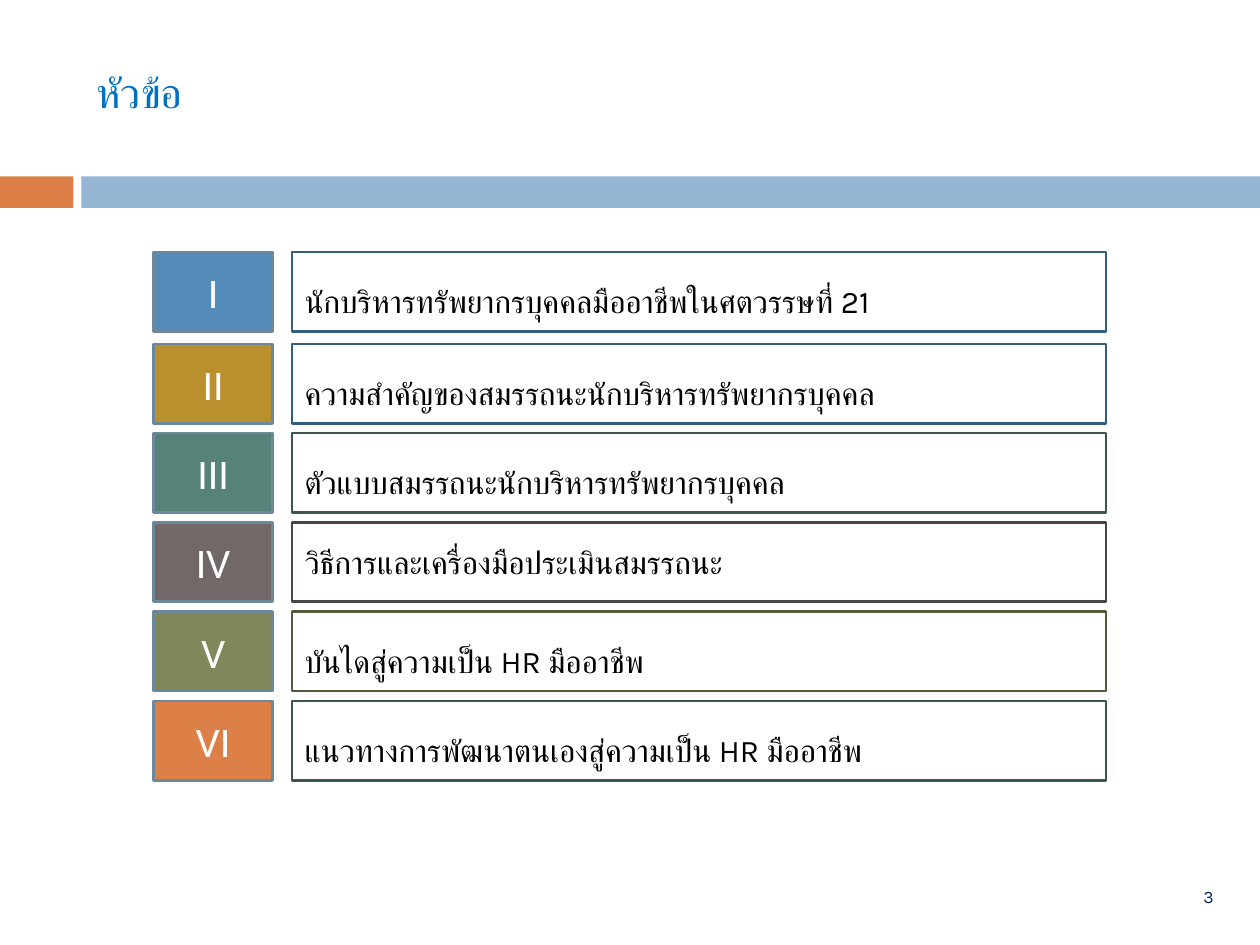
from dataclasses import dataclass

from lxml import etree
from pptx import Presentation
from pptx.dml.color import RGBColor
from pptx.enum import shapes, text
from pptx.oxml import ns
from pptx.util import Pt


@dataclass(frozen=True)
class Theme:
    title_font: str = "TeX Gyre Adventor"
    body_font: str = "Karla"
    numeral_font: str = "Calibri"
    title_size: int = 24
    numeral_size: int = 24
    topic_size: int = 18
    page_size: int = 10
    title: str = "0070C0"
    page: str = "002060"
    accent: str = "DD8047"
    band: str = "94B6D2"
    numeral_line: str = "6D879B"
    white: str = "FFFFFF"
    black: str = "000000"


THEME = Theme()
FIRST_TOP, SECOND_TOP, ROW_PITCH = 144, 196.5, 51
ROW_HEIGHT = 45.4

# numeral, topic, numeral fill, topic outline, line spacing
TOPICS = [
    ("I", "นักบริหารทรัพยากรบุคคลมืออาชีพในศตวรรษที่ 21", "558BB8", "355D7E", 1.5),
    ("II", "ความสำคัญของสมรรถนะนักบริหารทรัพยากรบุคคล", "BA8F2D", "355D7E", 1.5),
    ("III", "ตัวแบบสมรรถนะนักบริหารทรัพยากรบุคคล", "578279", "3A5750", 1.5),
    ("IV", "วิธีการและเครื่องมือประเมินสมรรถนะ", "726868", "4C4545", 1),
    ("V", "บันไดสู่ความเป็น HR มืออาชีพ", "81875A", "565A3C", 1.5),
    ("VI", "แนวทางการพัฒนาตนเองสู่ความเป็น HR มืออาชีพ", THEME.accent, "3A5750", 1.5),
]


def write(shape, words, font, size, color, align=text.PP_ALIGN.LEFT, spacing=1):
    """Put one middle-anchored run in the shape, in one font for Latin and Thai."""
    frame = shape.text_frame
    frame.word_wrap = True
    frame.auto_size = text.MSO_AUTO_SIZE.NONE
    frame.vertical_anchor = text.MSO_ANCHOR.MIDDLE
    paragraph = frame.paragraphs[0]
    paragraph.alignment = align
    paragraph.line_spacing = spacing
    run = paragraph.add_run()
    run.text = words
    run.font.size = Pt(size)
    run.font.color.rgb = RGBColor.from_string(color)
    run.font.name = font
    thai = etree.SubElement(run.font._element, ns.qn("a:cs"))
    thai.set("typeface", font)


def add_box(slide, left, top, width, height, fill, line=None):
    shape = slide.shapes.add_shape(
        shapes.MSO_SHAPE.RECTANGLE, Pt(left), Pt(top), Pt(width), Pt(height))
    shape.shadow.inherit = False
    shape.fill.solid()
    shape.fill.fore_color.rgb = RGBColor.from_string(fill)
    if line:
        shape.line.color.rgb = RGBColor.from_string(line)
        shape.line.width = Pt(1.5)
    else:
        shape.line.fill.background()
    return shape


def add_title(slide, words):
    title = slide.shapes.title
    title.left, title.top, title.width, title.height = Pt(48), Pt(26), Pt(540), Pt(52.5)
    write(title, words, THEME.title_font, THEME.title_size, THEME.title)


def add_page_number(slide, number):
    box = slide.shapes.add_textbox(Pt(669.6), Pt(502.5), Pt(42), Pt(19.5))
    write(box, number, THEME.body_font, THEME.page_size, THEME.page,
          text.PP_ALIGN.CENTER)


def add_topic(slide, top, numeral, topic, fill, outline, spacing):
    badge = add_box(slide, 87.8, top, 68, ROW_HEIGHT, fill, THEME.numeral_line)
    write(badge, numeral, THEME.numeral_font, THEME.numeral_size, THEME.white,
          text.PP_ALIGN.CENTER)
    box = add_box(slide, 167, top, 465, ROW_HEIGHT, THEME.white, outline)
    write(box, topic, THEME.body_font, THEME.topic_size, THEME.black,
          spacing=spacing)


def main():
    presentation = Presentation()
    presentation.slide_width, presentation.slide_height = Pt(720), Pt(540)
    slide = presentation.slides.add_slide(presentation.slide_layouts[5])
    add_box(slide, 0, 100.8, 42, 18, THEME.accent)
    add_box(slide, 46.5, 100.8, 673.5, 18, THEME.band)
    add_page_number(slide, "3")
    add_title(slide, "หัวข้อ")
    for index, topic in enumerate(TOPICS):
        top = SECOND_TOP + (index - 1) * ROW_PITCH if index else FIRST_TOP
        add_topic(slide, top, *topic)
    presentation.save("out.pptx")


if __name__ == "__main__":
    main()
